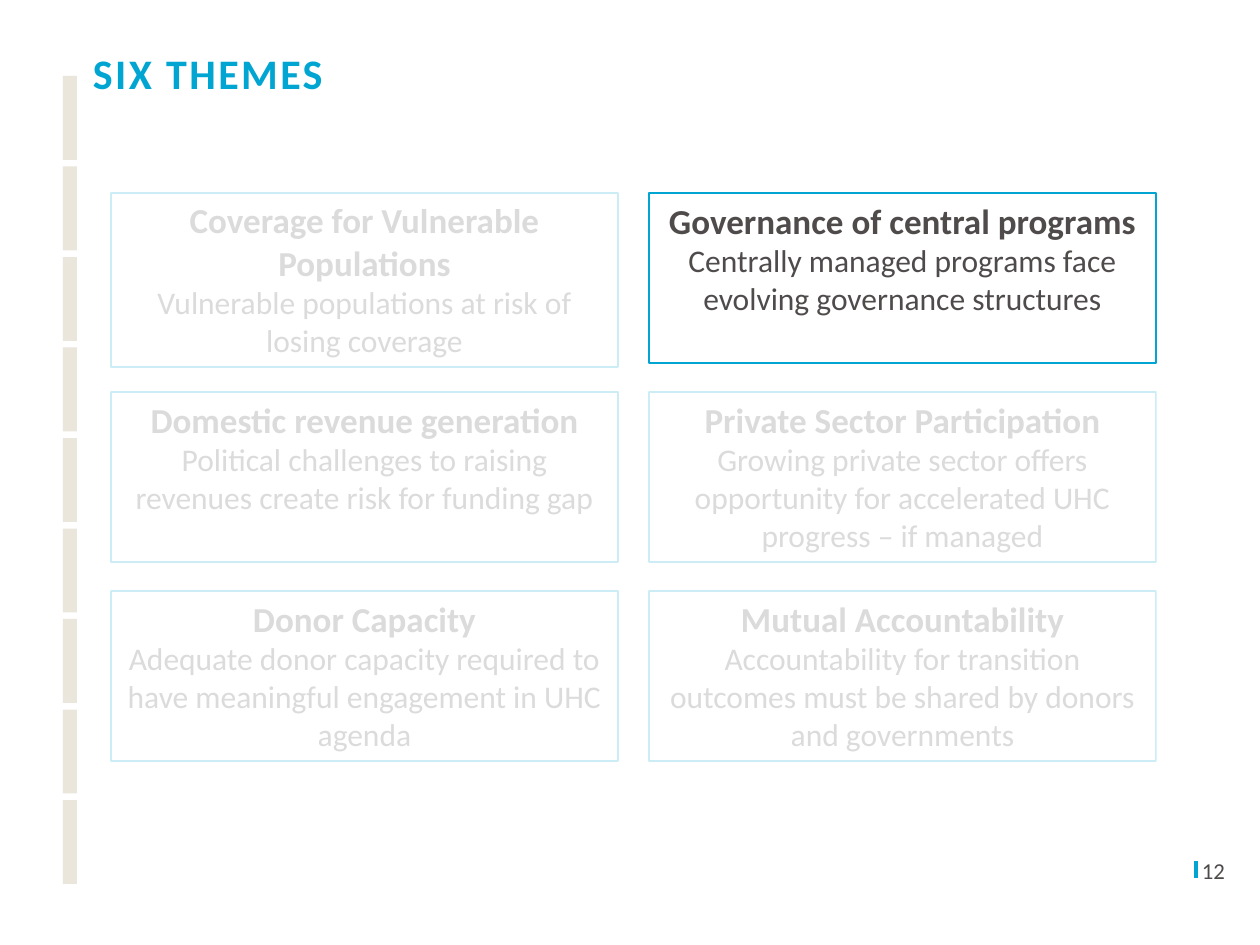
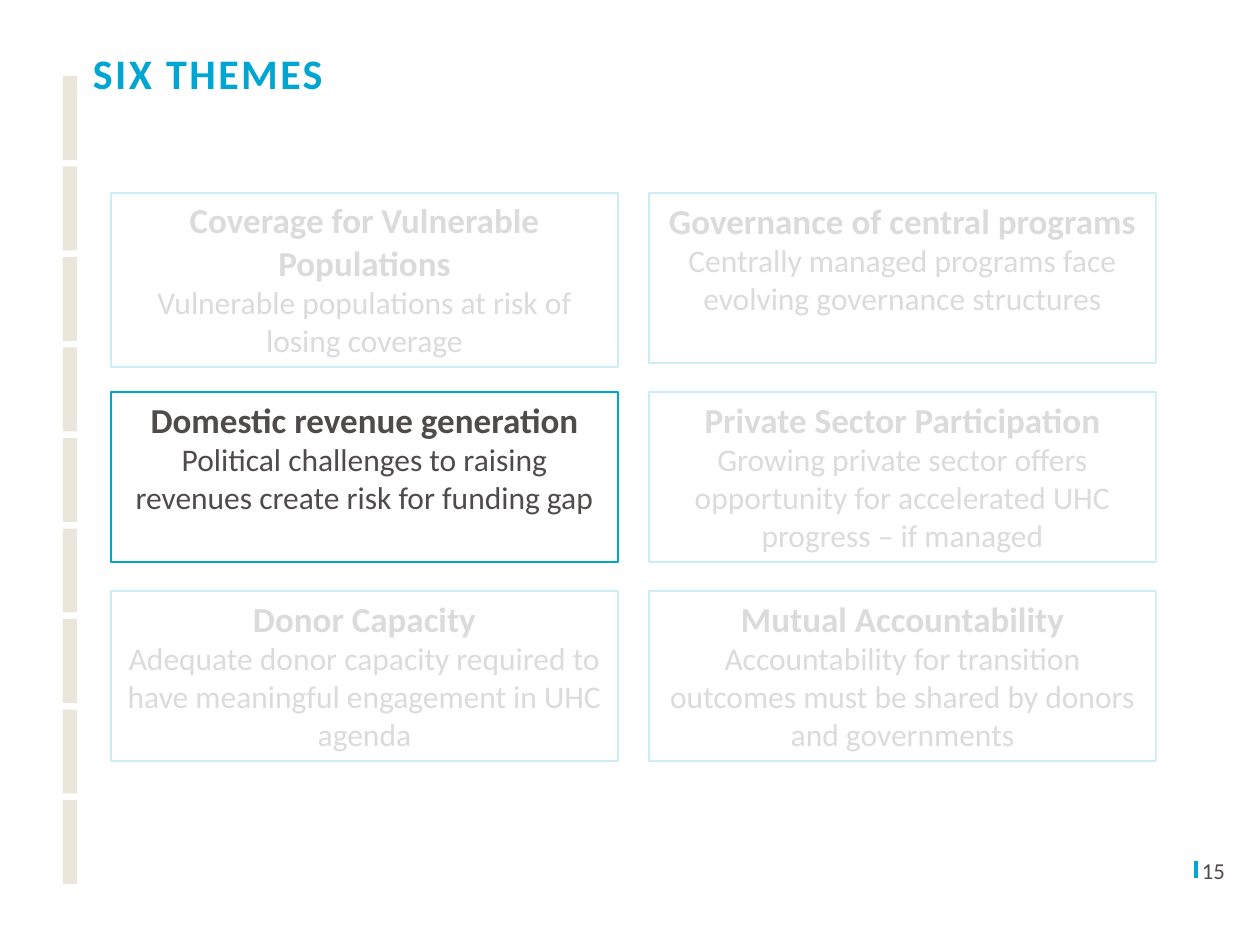
from lxml import etree
from pptx import Presentation
from pptx import util as u
from pptx.dml.color import RGBColor
from pptx.enum import shapes, text
from pptx.oxml.ns import qn

EMU_PER_PX = 914400 / 126
FONT = "Calibri"
BLUE, GRAY, SAND = "00A5D2", "504B4B", "EBE6DC"

# Heading and description, row by row
THEMES = [
    ("Coverage for Vulnerable Populations",
     "Vulnerable populations at risk of losing coverage"),
    ("Governance of central programs",
     "Centrally managed programs face evolving governance structures"),
    ("Domestic revenue generation",
     "Political challenges to raising revenues create risk for funding gap"),
    ("Private Sector Participation",
     "Growing private sector offers opportunity for accelerated UHC progress – if managed"),
    ("Donor Capacity",
     "Adequate donor capacity required to have meaningful engagement in UHC agenda"),
    ("Mutual Accountability",
     "Accountability for transition outcomes must be shared by donors and governments"),
]


def px(*lengths):
    return [u.Emu(round(length * EMU_PER_PX)) for length in lengths]


def color(hex_string):
    return RGBColor.from_string(hex_string)


class Builder:
    """Holds the deck, its style and the current slide."""

    def __init__(self):
        self.deck = Presentation()
        self.deck.slide_width, self.deck.slide_height = px(1260, 945)
        self.page = None

    def new_page(self, title, number):
        self.page = self.deck.slides.add_slide(self.deck.slide_layouts[5])
        self.spine()
        self.page_number(number)
        self.title(title)

    def frame(self, box, margins, anchor):
        """Set the margins, anchor and wrapping of a box's text."""
        frame = box.text_frame
        frame.word_wrap = True
        frame.auto_size = text.MSO_AUTO_SIZE.NONE
        frame.vertical_anchor = anchor
        side, end = px(*margins)
        frame.margin_left = frame.margin_right = side
        frame.margin_top = frame.margin_bottom = end
        return frame

    def span(self, para, words, size, hex_string, bold=False):
        span = para.add_run()
        span.text = words
        span.font.name = FONT
        span.font.size = u.Pt(size)
        span.font.bold = bold
        span.font.color.rgb = color(hex_string)
        return span

    def rectangle(self, left, top, width, height):
        box = self.page.shapes.add_shape(
            shapes.MSO_SHAPE.RECTANGLE, *px(left, top, width, height))
        box.shadow.inherit = False
        return box

    def spine(self):
        """Draw the column of nine bars at the left edge."""
        for index in range(9):
            bar = self.rectangle(63, 76 + 181 * index / 2, 14, 84)
            bar.fill.solid()
            bar.fill.fore_color.rgb = color(SAND)
            bar.line.fill.background()

    def page_number(self, number):
        mark = self.page.shapes.add_connector(
            shapes.MSO_CONNECTOR.STRAIGHT, *px(1196, 861, 1196, 878))
        mark.line.color.rgb = color(BLUE)
        mark.line.width = u.Pt(2.15)
        etree.SubElement(mark._element.spPr, qn("a:effectLst"))
        box = self.page.shapes.add_textbox(*px(1202, 849, 35, 35))
        frame = self.frame(box, (0, 0), text.MSO_ANCHOR.BOTTOM)
        self.span(frame.paragraphs[0], str(number), 13, GRAY)

    def title(self, words):
        box = self.page.shapes.title
        box.left, box.top, box.width, box.height = px(84, 48, 1087, 183)
        para = self.frame(box, (9, 5), text.MSO_ANCHOR.TOP).paragraphs[0]
        para.alignment = text.PP_ALIGN.LEFT
        para.line_spacing = 0.9
        span = self.span(para, words, 24, BLUE, bold=True)
        span.font._element.set("spc", "140")

    def card(self, left, top, height, heading, description, faded):
        box = self.rectangle(left, top, 507, height)
        box.fill.background()
        box.line.color.rgb = color(BLUE)
        box.line.width = u.Pt(1)
        frame = self.frame(box, (13, 6), text.MSO_ANCHOR.TOP)
        first, second = frame.paragraphs[0], frame.add_paragraph()
        first.alignment = second.alignment = text.PP_ALIGN.CENTER
        self.span(first, heading, 20, GRAY, bold=True)
        self.span(second, description, 18, GRAY)
        if faded:
            self.fade(box)

    def fade(self, box):
        """Make the line and text of a box 20 % opaque."""
        for tint in box._element.iter(qn("a:srgbClr")):
            etree.SubElement(tint, qn("a:alpha")).set("val", "20000")

    def theme_grid(self, active):
        for index, (heading, description) in enumerate(THEMES):
            row, column = divmod(index, 2)
            height = 174 if index == 0 else 170  # four lines in the first card
            self.card(111 + 538 * column, 193 + 199 * row, height,
                      heading, description, faded=index != active)


def main():
    builder = Builder()
    # Page number and the highlighted theme
    for number, active in [(12, 1), (15, 2)]:
        builder.new_page("SIX THEMES", number)
        builder.theme_grid(active)
    builder.deck.save("out.pptx")


if __name__ == "__main__":
    main()
